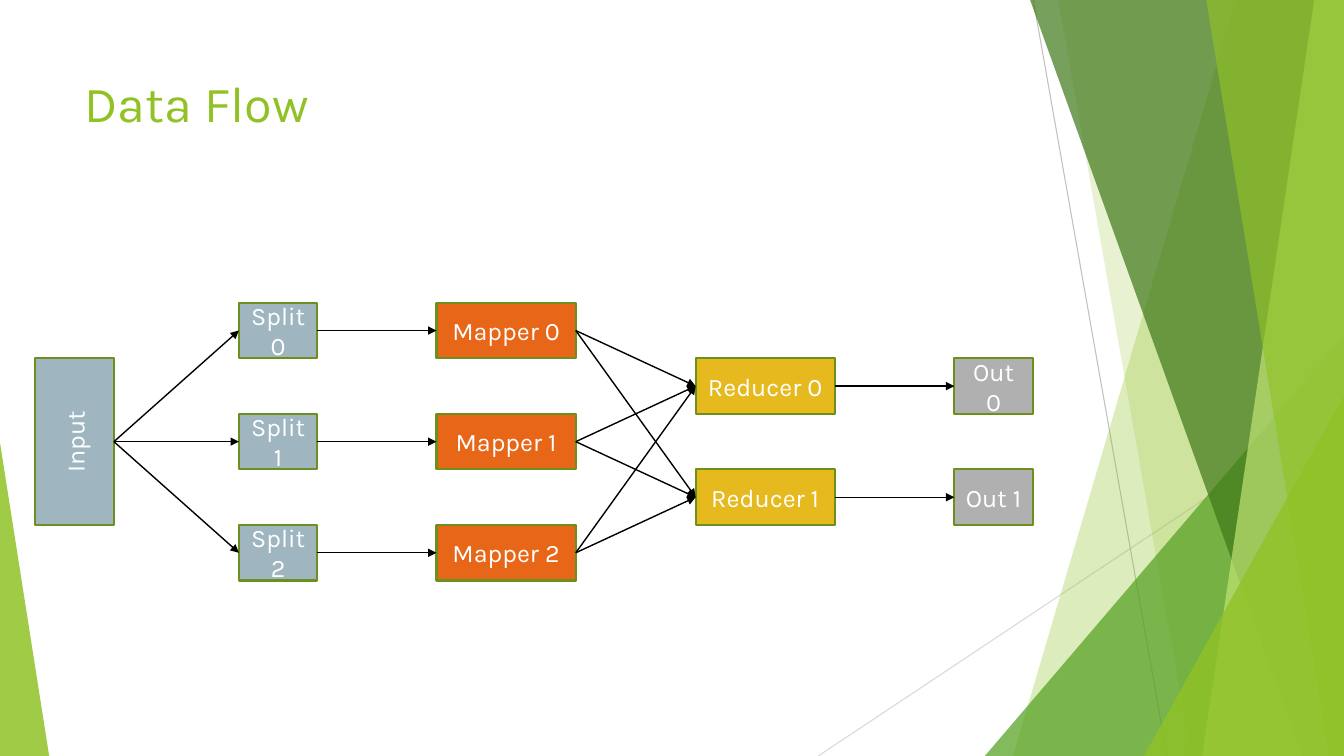
from itertools import product

from lxml import etree
from pptx import Presentation
from pptx.dml.color import RGBColor
from pptx.enum.shapes import MSO_CONNECTOR, MSO_SHAPE
from pptx.enum.text import MSO_ANCHOR, PP_ALIGN
from pptx.oxml.ns import qn
from pptx.util import Cm, Pt

STRAIGHT = MSO_CONNECTOR.STRAIGHT
RECT = MSO_SHAPE.RECTANGLE
TOP, MIDDLE = MSO_ANCHOR.TOP, MSO_ANCHOR.MIDDLE
LEFT, CENTER = PP_ALIGN.LEFT, PP_ALIGN.CENTER
LEFT_SITE, RIGHT_SITE = 1, 3

FONT = "Karla"
W, H = 33.87, 19.05
COLORS = {
    "lime": "90C226", "green": "54A021", "forest": "3F7819", "pale": "C0E474",
    "rule": "D9D9D9", "rule_dark": "BFBFBF", "border": "6B901C",
    "input": "9FB6C0", "mapper": "E76618", "reducer": "E6B91E", "out": "B0B0B0",
    "text": "FFFFFF", "arrow": "000000",
}


def rgb(name):
    return RGBColor.from_string(COLORS[name])


def style_text(tf, size, color, align, anchor):
    tf.word_wrap = True
    tf.vertical_anchor = anchor
    for p in tf.paragraphs:
        p.alignment = align
        for r in p.runs:
            r.font.name = FONT
            r.font.size = Pt(size)
            r.font.color.rgb = rgb(color)


def add_line(s, x1, y1, x2, y2, color, width):
    line = s.shapes.add_connector(STRAIGHT, Cm(x1), Cm(y1), Cm(x2), Cm(y2))
    line.line.color.rgb = rgb(color)
    line.line.width = Pt(width)
    etree.SubElement(line._element.spPr, qn("a:effectLst"))
    return line


def add_facet(s, points, color, opacity):
    """Draw a borderless translucent polygon; opacity is in percent."""
    start, *rest = [(Cm(x), Cm(y)) for x, y in points]
    builder = s.shapes.build_freeform(*start)
    builder.add_line_segments(rest, close=True)
    sp = builder.convert_to_shape()
    sp.shadow.inherit = False
    sp.line.fill.background()
    sp.fill.solid()
    sp.fill.fore_color.rgb = rgb(color)
    clr = sp._element.spPr.find(qn("a:solidFill"))[0]
    etree.SubElement(clr, qn("a:alpha"), val=str(opacity * 1000))


def add_backdrop(s, w, h):
    add_line(s, 20.62, h, w, 10.24, "rule", 0.75)
    add_line(s, 26.04, 0, 29.41, h, "rule_dark", 0.75)
    # Each right-hand facet: top edge points, bottom edge point, colour, opacity
    facets = [
        ((31.14, 0), 25.53, "lime", 30),
        ((26.67, 0), 30.02, "lime", 20),
        ((w, 8.46), 24.82, "green", 72),
        ((25.96, 0), 32.82, "forest", 70),
        ((33.12, 0), 30.3, "pale", 70),
        ((30.4, 0), 33.5, "lime", 65),
        ((w, 9.98), 28.83, "lime", 80),
    ]
    for (x, y), bottom_x, color, opacity in facets:
        add_facet(s, [(x, y), (bottom_x, h), (w, h), (w, y)], color, opacity)
    add_facet(s, [(0, 11.15), (1.24, h), (0, h)], "lime", 85)


def add_title(s, text, x, y, w, h):
    title = s.shapes.title
    title.left, title.top, title.width, title.height = Cm(x), Cm(y), Cm(w), Cm(h)
    title.text_frame.text = text
    style_text(title.text_frame, 36, "lime", LEFT, TOP)


def add_box(s, text, x, y, w, h, color):
    sp = s.shapes.add_shape(RECT, Cm(x), Cm(y), Cm(w), Cm(h))
    sp.shadow.inherit = False
    sp.fill.solid()
    sp.fill.fore_color.rgb = rgb(color)
    sp.line.color.rgb = rgb("border")
    sp.line.width = Pt(1.5)
    sp.text_frame.text = text
    style_text(sp.text_frame, 18, "text", CENTER, MIDDLE)
    return sp


def add_arrow(s, source, target):
    arrow = add_line(s, 0, 0, 0, 0, "arrow", 1)
    arrow.begin_connect(source, RIGHT_SITE)
    arrow.end_connect(target, LEFT_SITE)
    etree.SubElement(arrow.line._get_or_add_ln(), qn("a:tailEnd"), type="triangle")


def add_data_flow(s, x, y, h):
    """Lay out the stages from left x, each centred in the height h from y."""
    box_h = h / 5
    pitch = 2 * box_h
    narrow, wide = 1.98, 3.51

    def add_stage(label, count, dx, w, color):
        top = y + (h - box_h - pitch * (count - 1)) / 2
        return [add_box(s, f"{label} {i}", x + dx, top + i * pitch, w, box_h, color)
                for i in range(count)]

    source = add_box(s, "Input", x, y + box_h, narrow, 3 * box_h, "input")
    source.text_frame._txBody.bodyPr.set("vert", "vert270")
    splits = add_stage("Split", 3, 5.13, narrow, "input")
    mappers = add_stage("Mapper", 3, 10.11, wide, "mapper")
    reducers = add_stage("Reducer", 2, 16.64, wide, "reducer")
    outs = add_stage("Out", 2, 23.16, narrow, "out")

    links = [*product([source], splits), *zip(splits, mappers),
             *product(mappers, reducers), *zip(reducers, outs)]
    for start, end in links:
        add_arrow(s, start, end)


def main():
    prs = Presentation()
    prs.slide_width, prs.slide_height = Cm(W), Cm(H)
    s = prs.slides.add_slide(prs.slide_layouts.get_by_name("Title Only"))
    add_backdrop(s, W, H)
    add_title(s, "Data Flow", 1.88, 1.7, 23.88, 3.66)
    add_data_flow(s, 0.89, 7.63, 7)
    prs.save("out.pptx")


if __name__ == "__main__":
    main()
